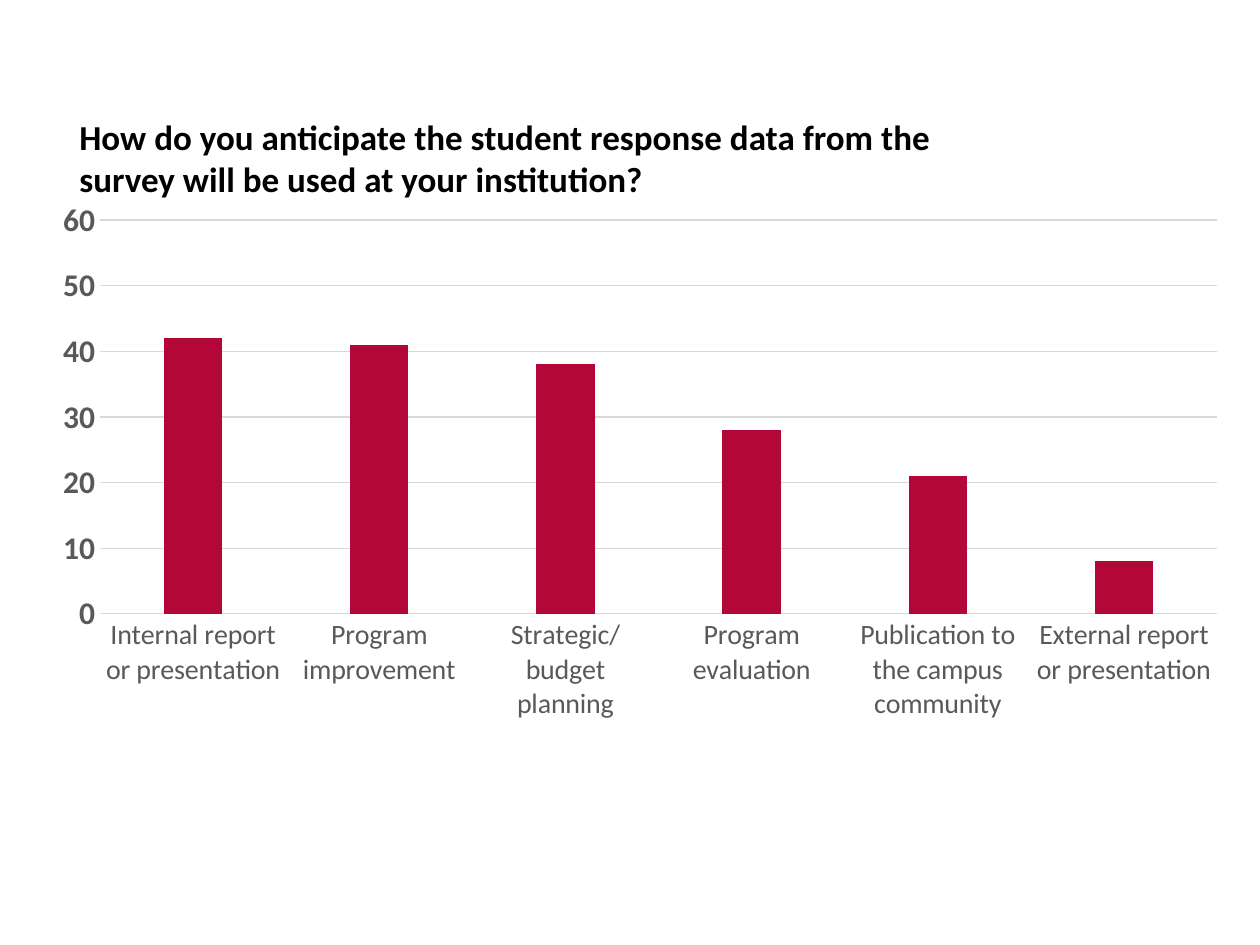
from pptx import Presentation
from pptx.chart.data import CategoryChartData
from pptx.dml.color import RGBColor
from pptx.enum.chart import XL_CHART_TYPE, XL_TICK_MARK
from pptx.enum.text import MSO_ANCHOR, MSO_AUTO_SIZE, PP_ALIGN
from pptx.util import Inches, Pt

COLUMNS = XL_CHART_TYPE.COLUMN_CLUSTERED
NO_TICKS = XL_TICK_MARK.NONE
TOP = MSO_ANCHOR.TOP
NO_FIT = MSO_AUTO_SIZE.NONE
LEFT = PP_ALIGN.LEFT

COLORS = {"title": "000000", "label": "595959", "grid": "D9D9D9", "bar": "B20737"}
FONT = "Calibri"
TITLE_ONLY = 5

USES = {
    "Internal report or presentation": 42,
    "Program improvement": 41,
    "Strategic/budget planning": 38,
    "Program evaluation": 28,
    "Publication to the campus community": 21,
    "External report or presentation": 8,
}


def format_font(font, size, color, bold=False):
    font.name = FONT
    font.size = Pt(size)
    font.bold = bold
    font.color.rgb = RGBColor.from_string(COLORS[color])


def write_text(frame, text, align=LEFT, **font_format):
    frame.text = text
    frame.word_wrap = True
    frame.auto_size = NO_FIT
    frame.vertical_anchor = TOP
    paragraph = frame.paragraphs[0]
    paragraph.alignment = align
    format_font(paragraph.runs[0].font, **font_format)


prs = Presentation()
prs.slide_width, prs.slide_height = Inches(10), Inches(7.5)
slide = prs.slides.add_slide(prs.slide_layouts[TITLE_ONLY])

question = slide.shapes.title
question.left, question.top = Inches(0.53), Inches(0.87)
question.width, question.height = Inches(7.69), Inches(0.77)
write_text(
    question.text_frame,
    "How do you anticipate the student response data from the survey will be used at your institution?",
    size=20, color="title", bold=True,
)

responses = CategoryChartData(number_format="General")
responses.categories = list(USES)
responses.add_series("Series 1", list(USES.values()))
chart = slide.shapes.add_chart(
    COLUMNS, Inches(0.31), Inches(1.51), Inches(9.54), Inches(4.3), responses
).chart
chart.has_title = False
chart.has_legend = False
format_font(chart.font, size=10, color="title")

bars = chart.plots[0]
bars.vary_by_categories = False
bars.gap_width = 219
bars.overlap = -27
bar_fill = bars.series[0].format.fill
bar_fill.solid()
bar_fill.fore_color.rgb = RGBColor.from_string(COLORS["bar"])

uses_axis, count_axis = chart.category_axis, chart.value_axis
for axis in (uses_axis, count_axis):
    axis.major_tick_mark = NO_TICKS
    axis.minor_tick_mark = NO_TICKS
format_font(uses_axis.tick_labels.font, size=16, color="label")
format_font(count_axis.tick_labels.font, size=18, color="label", bold=True)

count_axis.minimum_scale = 0
count_axis.maximum_scale = 60
count_axis.major_unit = 10
count_axis.has_major_gridlines = True
count_axis.format.line.fill.background()
for line in (uses_axis.format.line, count_axis.major_gridlines.format.line):
    line.width = Pt(0.75)
    line.color.rgb = RGBColor.from_string(COLORS["grid"])

prs.save("out.pptx")
